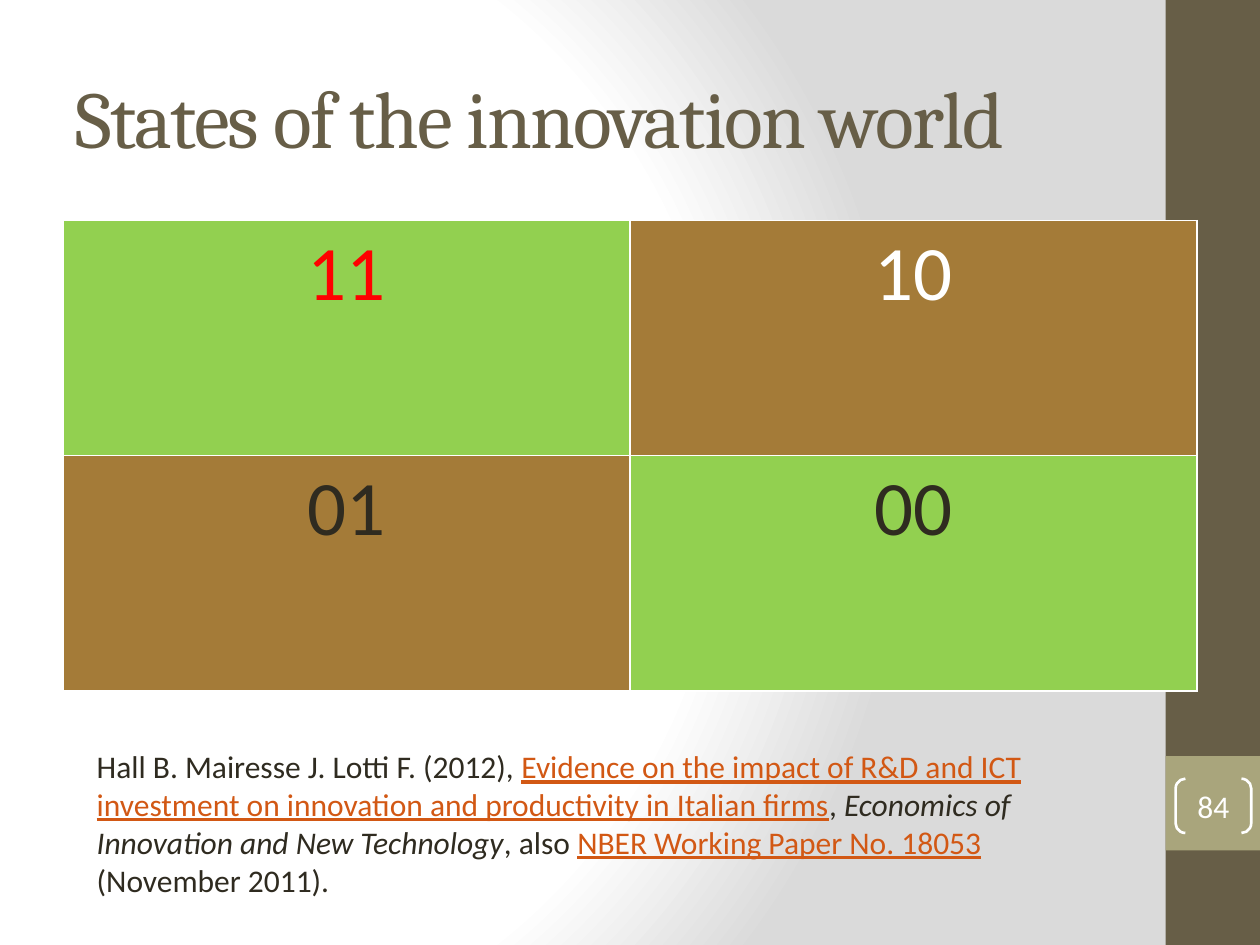
from lxml import etree
from pptx import Presentation
from pptx.dml.color import RGBColor
from pptx.enum.shapes import MSO_SHAPE as Shape
from pptx.enum.text import MSO_ANCHOR as Anchor, PP_ALIGN as Align
from pptx.oxml import parse_xml
from pptx.oxml.ns import nsdecls, qn
from pptx.util import Pt

WHITE = RGBColor(0xFF, 0xFF, 0xFF)
OLIVE = RGBColor(0x67, 0x5E, 0x47)
SAGE = RGBColor(0xA9, 0xA5, 0x7C)
DARK = RGBColor(0x2F, 0x2B, 0x20)
RED = RGBColor(0xFF, 0x00, 0x00)
GREEN = RGBColor(0x92, 0xD0, 0x50)
BROWN = RGBColor(0xA4, 0x7B, 0x38)
ORANGE = RGBColor(0xD2, 0x58, 0x14)


def style(font, name, size, color):
    font.name, font.size, font.color.rgb = name, Pt(size), color


def add_border(cell, side):
    line = etree.SubElement(cell._tc.get_or_add_tcPr(), qn(f"a:ln{side}"), w=str(Pt(1)))
    fill = etree.SubElement(line, qn("a:solidFill"))
    etree.SubElement(fill, qn("a:srgbClr"), val=str(WHITE))


presentation = Presentation()
presentation.slide_width, presentation.slide_height = Pt(720), Pt(540)
slide = presentation.slides.add_slide(presentation.slide_layouts[6])
shapes = slide.shapes

# Radial background gradient
stops = [(0, "FFFFFF"), (75, "FFFFFF"), (100, "DADADA")]
stop_xml = "".join(
    f'<a:gs pos="{position * 1000}"><a:srgbClr val="{color}"/></a:gs>'
    for position, color in stops
)
background = parse_xml(
    f'<p:bg {nsdecls("p", "a")}><p:bgPr><a:gradFill rotWithShape="1">'
    f"<a:gsLst>{stop_xml}</a:gsLst>"
    '<a:path path="circle"><a:fillToRect l="20000" t="50000" r="100000" b="50000"/></a:path>'
    "</a:gradFill><a:effectLst/></p:bgPr></p:bg>"
)
slide.element.cSld.insert(0, background)

# Side band and page number block
for top, height, color in [(0, 540, OLIVE), (432, 54, SAGE)]:
    band = shapes.add_shape(Shape.RECTANGLE, Pt(666), Pt(top), Pt(54), Pt(height))
    band.shadow.inherit = False
    band.fill.solid()
    band.fill.fore_color.rgb = color
    band.line.fill.background()

# Title
title = shapes.add_textbox(Pt(36), Pt(21.6), Pt(600), Pt(90))
frame = title.text_frame
frame.word_wrap = True
frame.vertical_anchor = Anchor.MIDDLE
paragraph = frame.paragraphs[0]
run = paragraph.add_run()
run.text = "States of the innovation world"
style(run.font, "Cambria", 46, OLIVE)
run._r.get_or_add_rPr().set("spc", "-100")

# Table of states
states = [
    [("11", RED, GREEN), ("10", WHITE, BROWN)],
    [("01", DARK, BROWN), ("00", DARK, GREEN)],
]
table = shapes.add_table(2, 2, Pt(36), Pt(126), Pt(648), Pt(268.8)).table
for row_index, row in enumerate(states):
    for column_index, (text, text_color, fill_color) in enumerate(row):
        cell = table.cell(row_index, column_index)
        for side in "LRTB":
            add_border(cell, side)
        cell.fill.solid()
        cell.fill.fore_color.rgb = fill_color
        cell.text = text
        paragraph = cell.text_frame.paragraphs[0]
        paragraph.alignment = Align.CENTER
        style(paragraph.font, "Calibri", 44, text_color)
        paragraph.font.bold = False

# Page number
page_number = shapes.add_shape(Shape.DOUBLE_BRACKET, Pt(671.8), Pt(445), Pt(43.2), Pt(31))
page_number.adjustments[0] = 0.18
page_number.shadow.inherit = False
page_number.fill.background()
page_number.line.color.rgb = WHITE
page_number.line.width = Pt(1.5)
frame = page_number.text_frame
frame.margin_left = frame.margin_right = frame.margin_top = frame.margin_bottom = 0
frame.vertical_anchor = Anchor.MIDDLE
frame.text = "84"
paragraph = frame.paragraphs[0]
paragraph.alignment = Align.CENTER
style(paragraph.font, "Calibri", 18, WHITE)

# Reference: text, underlined, italic
reference_parts = [
    ("Hall B. Mairesse J. Lotti F. (2012), ", False, False),
    ("Evidence on the impact of R&D and ICT investment on innovation "
     "and productivity in Italian firms", True, False),
    (", ", False, False),
    ("Economics of Innovation and New Technology", False, True),
    (", also ", False, False),
    ("NBER Working Paper No. 18053", True, False),
    (" (November 2011).", False, False),
]
reference = shapes.add_textbox(Pt(48.2), Pt(423.4), Pt(584), Pt(116.6))
frame = reference.text_frame
frame.word_wrap = True
paragraph = frame.paragraphs[0]
for text, underlined, italic in reference_parts:
    run = paragraph.add_run()
    run.text = text
    style(run.font, "Calibri", 18, ORANGE if underlined else DARK)
    run.font.underline = underlined
    run.font.italic = italic

presentation.save("out.pptx")
